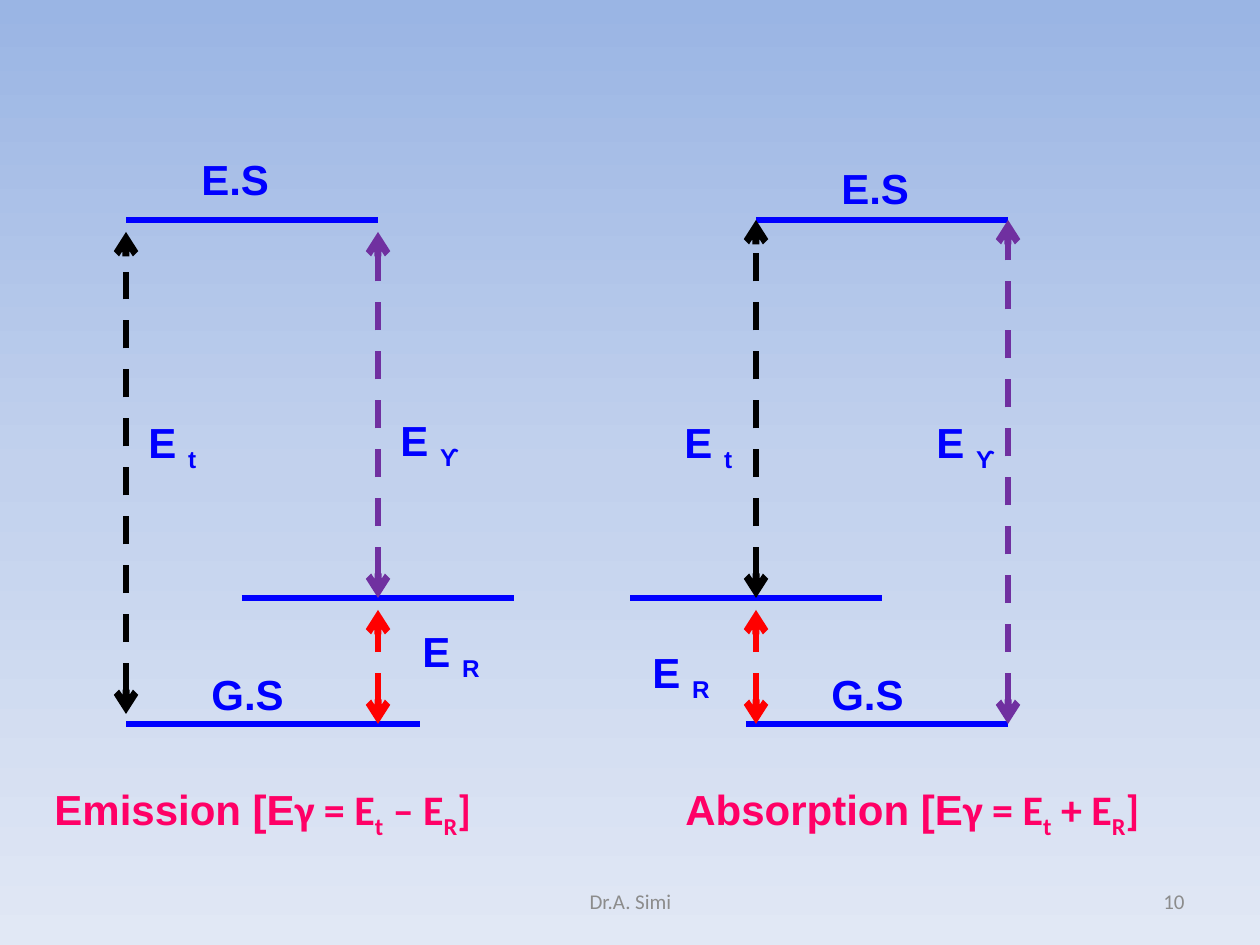
from dataclasses import dataclass
from typing import NamedTuple

from lxml import etree
from pptx import Presentation
from pptx.dml.color import RGBColor
from pptx.enum.dml import MSO_LINE
from pptx.enum.shapes import MSO_CONNECTOR
from pptx.enum.text import MSO_ANCHOR, MSO_AUTO_SIZE, PP_ALIGN
from pptx.oxml.ns import qn
from pptx.slide import Slide
from pptx.text.text import TextFrame, _Paragraph
from pptx.util import Emu, Pt

STRAIGHT = MSO_CONNECTOR.STRAIGHT
DASH = MSO_LINE.DASH
MIDDLE = MSO_ANCHOR.MIDDLE
FIT_TEXT = MSO_AUTO_SIZE.SHAPE_TO_FIT_TEXT
CENTER, RIGHT = PP_ALIGN.CENTER, PP_ALIGN.RIGHT

PX_PER_INCH = 126
SLIDE_WIDTH, SLIDE_HEIGHT = 1260, 945


@dataclass(frozen=True)
class Theme:
    background: tuple = ((0, "9AB5E4"), (50, "C2D1ED"), (100, "E1E8F5"))
    level: str = "0000FF"
    transition: str = "000000"
    gamma: str = "7030A0"
    recoil: str = "FF0000"
    equation: str = "FF0066"
    footer: str = "8C8C8C"
    heading_font: str = "Arial"
    body_font: str = "Calibri"
    label_size: int = 24
    footer_size: int = 12
    level_width: int = 3
    arrow_width: int = 4


THEME = Theme()


class Level(NamedTuple):
    left: int
    right: int
    y: int


class EnergyArrow(NamedTuple):
    x: int
    bottom: int
    top: int
    color: str


class Label(NamedTuple):
    left: int
    top: int
    text: str
    subscript: str = ""


class Footer(NamedTuple):
    left: int
    width: int
    text: str
    align: PP_ALIGN


class Equation(NamedTuple):
    process: str
    operator: str


EXCITED_Y, RECOIL_Y, GROUND_Y = 220, 598, 724

LEVELS = (
    Level(126, 378, EXCITED_Y),
    Level(242, 514, RECOIL_Y),
    Level(756, 1008, EXCITED_Y),
    Level(630, 882, RECOIL_Y),
    Level(746, 1008, GROUND_Y),
    Level(126, 420, GROUND_Y),
)
ARROWS = (
    EnergyArrow(126, 714, 232, THEME.transition),
    EnergyArrow(1008, GROUND_Y, EXCITED_Y, THEME.gamma),
    EnergyArrow(756, RECOIL_Y, EXCITED_Y, THEME.transition),
    EnergyArrow(378, RECOIL_Y, 232, THEME.gamma),
    EnergyArrow(378, GROUND_Y, 610, THEME.recoil),
    EnergyArrow(756, GROUND_Y, 610, THEME.recoil),
)
LABELS = (
    Label(388, 408, "E ", "ϒ"),
    Label(924, 410, "E ", "ϒ"),
    Label(410, 619, "E ", "R"),
    Label(640, 640, "E ", "R"),
    Label(672, 410, "E ", "t"),
    Label(136, 410, "E ", "t"),
    Label(189, 147, "E.S"),
    Label(829, 156, "E.S"),
    Label(199, 662, "G.S"),
    Label(819, 662, "G.S"),
)
EQUATIONS = (Equation("Emission", "–"), Equation("\tAbsorption", "+"))
ABSORPTION_TAB = 631
FOOTERS = (
    Footer(903, 294, "10", RIGHT),
    Footer(431, 399, "Dr.A. Simi", CENTER),
)


def px(length: int) -> Emu:
    return Emu(round(length * 914400 / PX_PER_INCH))


def paint_background(slide: Slide) -> None:
    fill = slide.background.fill
    fill.gradient()
    fill.gradient_angle = 270
    stops = next(slide.element.iter(qn("a:gsLst")))
    for default_stop in list(stops):
        stops.remove(default_stop)
    for percent, color in THEME.background:
        stop = etree.SubElement(stops, qn("a:gs"), pos=str(percent * 1000))
        etree.SubElement(stop, qn("a:srgbClr"), val=color)


def add_line(slide: Slide, start: tuple[int, int], end: tuple[int, int],
             color: str, width: int, arrow: bool = False) -> None:
    connector = slide.shapes.add_connector(
        STRAIGHT, *(px(value) for value in (*start, *end)))
    connector.line.color.rgb = RGBColor.from_string(color)
    connector.line.width = Pt(width)
    if arrow:
        connector.line.dash_style = DASH
        outline = connector.line._get_or_add_ln()
        for end_tag in ("a:headEnd", "a:tailEnd"):
            etree.SubElement(outline, qn(end_tag), type="arrow")
    etree.SubElement(connector.element.spPr, qn("a:effectLst"))


def add_text_frame(slide: Slide, left: int, top: int,
                   width: int, height: int) -> TextFrame:
    box = slide.shapes.add_textbox(px(left), px(top), px(width), px(height))
    box.text_frame.word_wrap = True
    return box.text_frame


def style(paragraph: _Paragraph, size: int, color: str, font: str,
          bold: bool) -> None:
    paragraph.font.size = Pt(size)
    paragraph.font.color.rgb = RGBColor.from_string(color)
    paragraph.font.name = font
    paragraph.font.bold = bold


def add_run(paragraph: _Paragraph, text: str, subscript: bool = False,
            font: str | None = None) -> None:
    run = paragraph.add_run()
    run.text = text
    if font:
        run.font.name = font
    if subscript:
        run.font._element.set("baseline", "-25000")


def add_label(slide: Slide, label: Label) -> None:
    frame = add_text_frame(slide, label.left, label.top, 116, 64)
    frame.auto_size = FIT_TEXT
    paragraph = frame.paragraphs[0]
    style(paragraph, THEME.label_size, THEME.level, THEME.heading_font, True)
    add_run(paragraph, label.text)
    if label.subscript:
        add_run(paragraph, label.subscript, subscript=True)


def add_equations(slide: Slide) -> None:
    """Set both energy balances on one line, the second at a tab stop."""
    frame = add_text_frame(slide, 42, 777, 1166, 64)
    frame.auto_size = FIT_TEXT
    paragraph = frame.paragraphs[0]
    style(paragraph, THEME.label_size, THEME.equation, THEME.body_font, True)
    tabs = etree.Element(qn("a:tabLst"))
    etree.SubElement(tabs, qn("a:tab"), pos=str(px(ABSORPTION_TAB)), algn="l")
    paragraph.font._element.addprevious(tabs)
    for process, operator in EQUATIONS:
        add_run(paragraph, f"{process} [E", font=THEME.heading_font)
        add_run(paragraph, "γ = E")
        add_run(paragraph, "t", subscript=True)
        add_run(paragraph, f" {operator} E")
        add_run(paragraph, "R", subscript=True)
        add_run(paragraph, "]")


def add_footer(slide: Slide, footer: Footer) -> None:
    frame = add_text_frame(slide, footer.left, 876, footer.width, 50)
    frame.vertical_anchor = MIDDLE
    paragraph = frame.paragraphs[0]
    paragraph.alignment = footer.align
    style(paragraph, THEME.footer_size, THEME.footer, THEME.body_font, False)
    add_run(paragraph, footer.text)


def main() -> None:
    deck = Presentation()
    deck.slide_width, deck.slide_height = px(SLIDE_WIDTH), px(SLIDE_HEIGHT)
    slide = deck.slides.add_slide(deck.slide_layouts[6])
    paint_background(slide)
    for level in LEVELS:
        add_line(slide, (level.left, level.y), (level.right, level.y),
                 THEME.level, THEME.level_width)
    for arrow in ARROWS:
        add_line(slide, (arrow.x, arrow.bottom), (arrow.x, arrow.top),
                 arrow.color, THEME.arrow_width, arrow=True)
    for label in LABELS:
        add_label(slide, label)
    add_equations(slide)
    for footer in FOOTERS:
        add_footer(slide, footer)
    deck.save("out.pptx")


if __name__ == "__main__":
    main()
